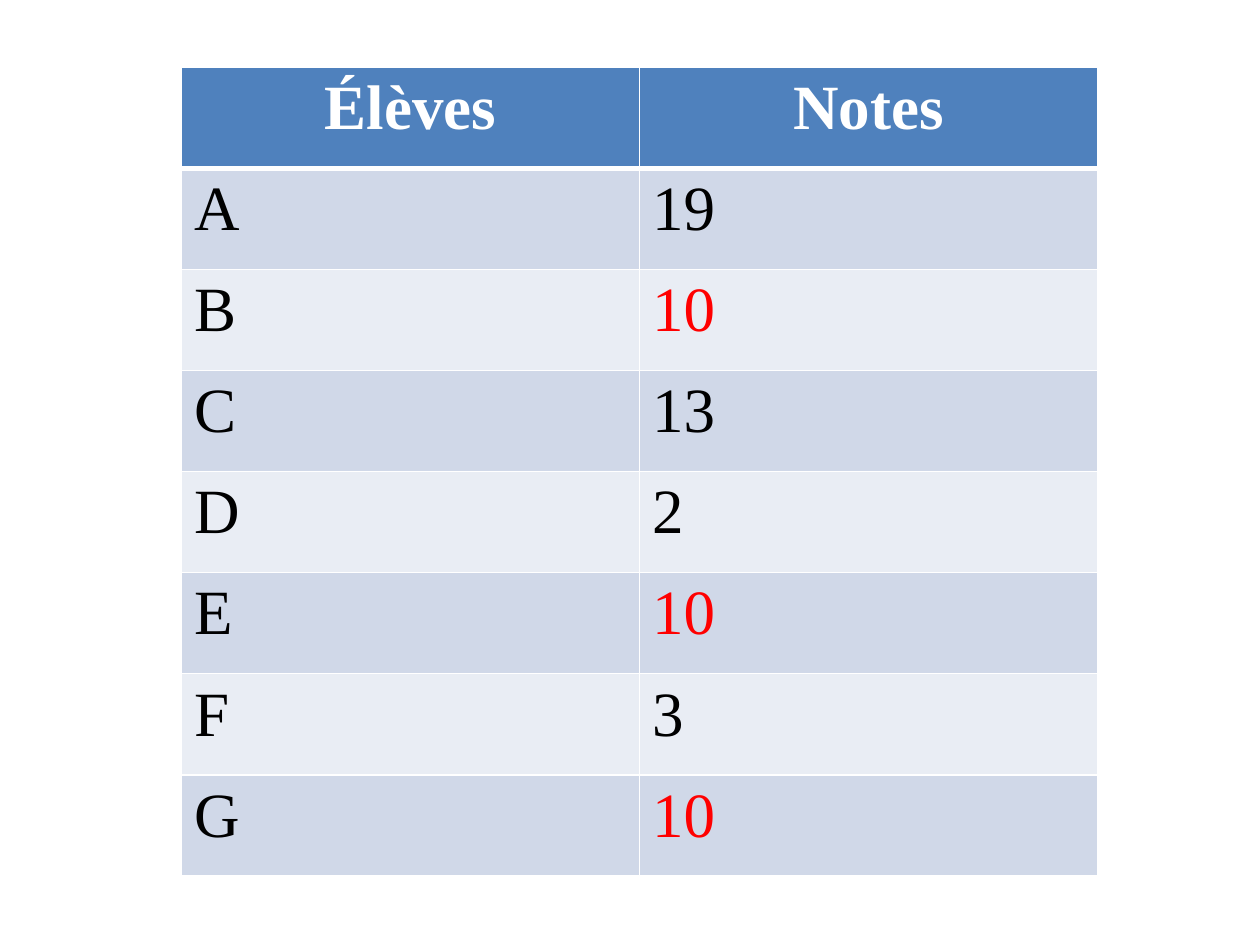
from dataclasses import dataclass

from pptx import Presentation
from pptx.dml.color import RGBColor as Color
from pptx.enum.text import PP_ALIGN as Align
from pptx.oxml.ns import qn
from pptx.util import Inches, Pt
from lxml.etree import SubElement


@dataclass(frozen=True)
class Theme:
    font: str = "Times New Roman"
    size: int = 36
    header_fill: str = "4F81BD"
    bands: tuple = ("D0D8E8", "E9EDF4")
    header_text: str = "FFFFFF"
    body_text: str = "000000"
    highlight: str = "FF0000"
    border: str = "FFFFFF"
    thin: int = 1
    thick: int = 3


THEME = Theme()
SLIDE_WIDTH, SLIDE_HEIGHT = Inches(10), Inches(7.5)
HEADER = ("Élèves", "Notes")
GRADES = {"A": 19, "B": 10, "C": 13, "D": 2, "E": 10, "F": 3, "G": 10}
REPEATED_GRADE = "10"


def set_borders(cell, top, bottom):
    properties = cell._tc.get_or_add_tcPr()
    widths = {"lnL": THEME.thin, "lnR": THEME.thin, "lnT": top, "lnB": bottom}
    for side, width in widths.items():
        line = SubElement(properties, qn(f"a:{side}"), w=str(Pt(width)))
        fill = SubElement(line, qn("a:solidFill"))
        SubElement(fill, qn("a:srgbClr"), val=THEME.border)


def set_cell(cell, text, fill, color, bold=False, align=Align.LEFT):
    cell.fill.solid()
    cell.fill.fore_color.rgb = Color.from_string(fill)
    cell.text_frame.text = text
    paragraph = cell.text_frame.paragraphs[0]
    paragraph.alignment = align
    font = paragraph.runs[0].font
    font.name, font.size, font.bold = THEME.font, Pt(THEME.size), bold
    font.color.rgb = Color.from_string(color)


def add_grades_table(slide):
    rows = [HEADER] + [(pupil, str(grade)) for pupil, grade in GRADES.items()]
    table = slide.shapes.add_table(
        len(rows), len(HEADER),
        int(SLIDE_WIDTH * 0.144), int(SLIDE_HEIGHT * 0.071),
        int(SLIDE_WIDTH * 0.727), int(SLIDE_HEIGHT * 0.856),
    ).table

    for row, values in enumerate(rows):
        for column, text in enumerate(values):
            cell = table.cell(row, column)
            # The rule under the header is shared by the first two rows
            set_borders(
                cell,
                top=THEME.thick if row == 1 else THEME.thin,
                bottom=THEME.thick if row == 0 else THEME.thin,
            )
            if row == 0:
                set_cell(cell, text, THEME.header_fill, THEME.header_text,
                         bold=True, align=Align.CENTER)
            else:
                repeated = text == REPEATED_GRADE
                set_cell(cell, text, THEME.bands[(row - 1) % 2],
                         THEME.highlight if repeated else THEME.body_text)


def main():
    presentation = Presentation()
    presentation.slide_width = SLIDE_WIDTH
    presentation.slide_height = SLIDE_HEIGHT
    slide = presentation.slides.add_slide(presentation.slide_layouts[6])

    # Pupils and their grades
    add_grades_table(slide)

    presentation.save("out.pptx")


if __name__ == "__main__":
    main()
